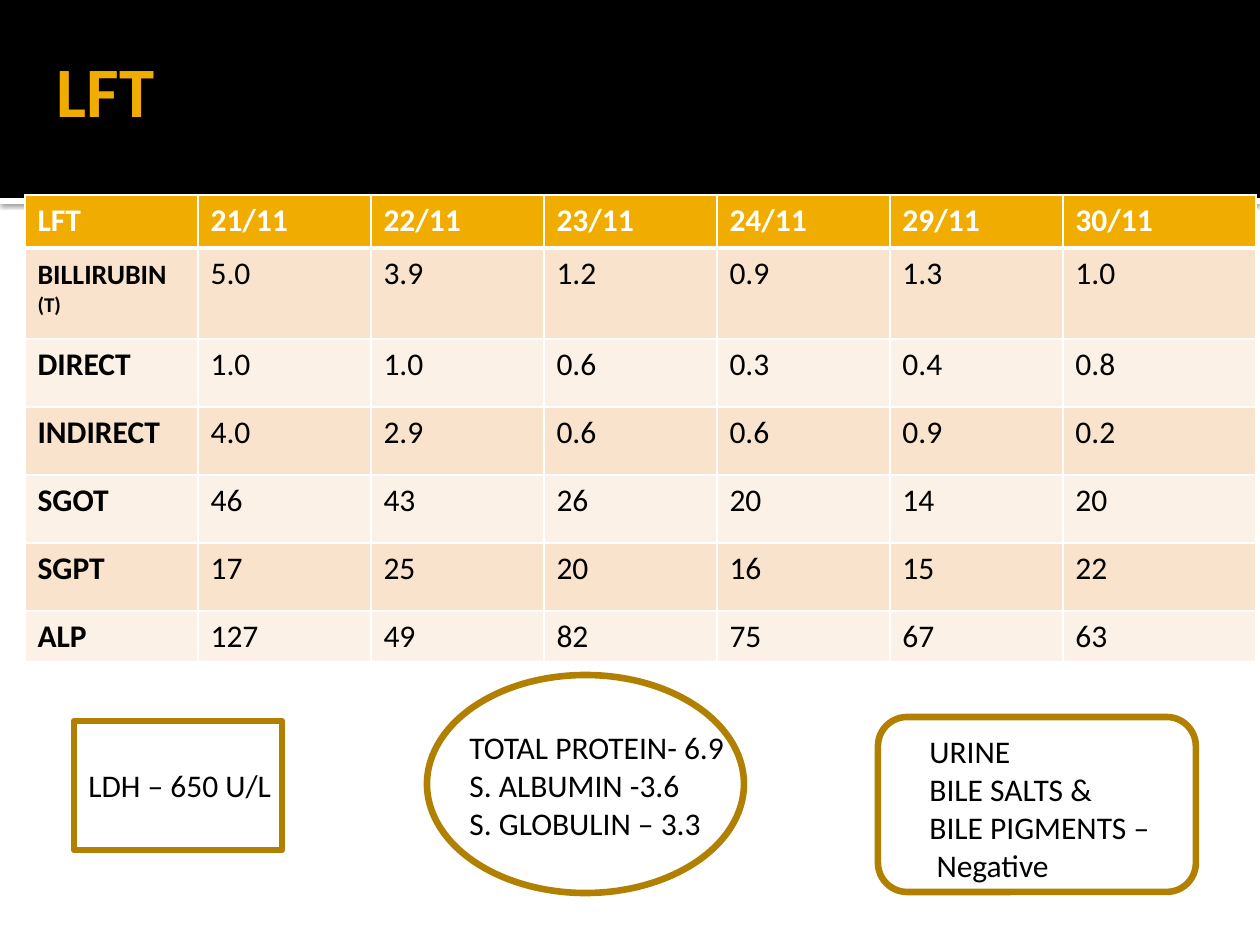
import pptx
import pptx.util
import pptx.dml.color
import pptx.enum.shapes
import pptx.enum.text
import pptx.oxml
import pptx.oxml.ns

PX = 914400 / 126  # EMU in one px
FONT = "Calibri"
COLORS = {
    "black": "000000", "white": "FFFFFF", "gold": "F0AD00",
    "dark_gold": "B28000", "band": "F9E3CC", "pale": "FCF1E7",
}
SHAPE = pptx.enum.shapes.MSO_SHAPE
NS = pptx.oxml.ns.nsdecls("a")

RESULTS = [
    ["LFT", "21/11", "22/11", "23/11", "24/11", "29/11", "30/11"],
    ["BILLIRUBIN (T)", "5.0", "3.9", "1.2", "0.9", "1.3", "1.0"],
    ["DIRECT", "1.0", "1.0", "0.6", "0.3", "0.4", "0.8"],
    ["INDIRECT", "4.0", "2.9", "0.6", "0.6", "0.9", "0.2"],
    ["SGOT", "46", "43", "26", "20", "14", "20"],
    ["SGPT", "17", "25", "20", "16", "15", "22"],
    ["ALP", "127", "49", "82", "75", "67", "63"],
]
COLUMN_WIDTHS = [173] * 6 + [193]
ROW_HEIGHTS = [53, 91] + [68] * 4 + [45]
# Runs with their own sizes
SIZED_RUNS = {"BILLIRUBIN (T)": [("BILLIRUBIN", 16), (" ", 18), ("(T)", 12)]}

# Outline, its box, offset and size of its text, lines
FINDINGS = [
    (SHAPE.RECTANGLE, (74, 721, 208, 129), (2, 39, 210, 50),
     ["LDH – 650 U/L"]),
    (SHAPE.OVAL, (427, 675, 317, 218), (30, 47, 282, 127),
     ["TOTAL PROTEIN- 6.9", "S. ALBUMIN -3.6", "S. GLOBULIN – 3.3"]),
    (SHAPE.ROUNDED_RECTANGLE, (878, 717, 318, 175), (39, 9, 247, 165),
     ["URINE", "BILE SALTS &", "BILE PIGMENTS –", " Negative"]),
]


def emu(px):
    return round(px * PX)


def rgb(name):
    return pptx.dml.color.RGBColor.from_string(COLORS[name])


def add_run(paragraph, text, color="black", size=18, bold=False):
    run = paragraph.add_run()
    run.text = text
    formats = {"name": FONT, "size": pptx.util.Pt(size), "bold": bold}
    for attribute, value in formats.items():
        setattr(run.font, attribute, value)
    run.font.color.rgb = rgb(color)


def add_outline(slide, kind, box, fill=None, line=None):
    outline = slide.shapes.add_shape(kind, *map(emu, box))
    outline.shadow.inherit = False
    if fill:
        outline.fill.solid()
        outline.fill.fore_color.rgb = rgb(fill)
    else:
        outline.fill.background()
    if line:
        outline.line.color.rgb = rgb(line)
        outline.line.width = pptx.util.Pt(3.78)
    else:
        outline.line.fill.background()
    return outline


def add_header(slide, box):
    left, top, width, height = box
    # White strip with a soft shadow under the black band
    strip = add_outline(slide, SHAPE.RECTANGLE,
                        (left, top + height, width, 6), "white")
    effects = strip._element.spPr.find(pptx.oxml.ns.qn("a:effectLst"))
    effects.append(pptx.oxml.parse_xml(
        f'<a:outerShdw {NS} blurRad="31750" dist="10160" dir="5400000">'
        f'<a:srgbClr val="{COLORS["black"]}"><a:alpha val="60000"/></a:srgbClr>'
        '</a:outerShdw>'))
    add_outline(slide, SHAPE.RECTANGLE, box, "black")

    # Title, brought in front of the band
    title = slide.shapes.title
    slide.shapes._spTree.append(title._element)
    place = (left + 44, top + 55, 160, 68)
    for attribute, value in zip(("left", "top", "width", "height"), place):
        setattr(title, attribute, emu(value))
    frame = title.text_frame
    formats = {
        "margin_left": emu(13), "margin_right": emu(6),
        "margin_top": emu(6), "margin_bottom": emu(6),
        "word_wrap": True, "auto_size": pptx.enum.text.MSO_AUTO_SIZE.NONE,
        "vertical_anchor": pptx.enum.text.MSO_ANCHOR.MIDDLE,
    }
    for attribute, value in formats.items():
        setattr(frame, attribute, value)
    frame.paragraphs[0].alignment = pptx.enum.text.PP_ALIGN.LEFT
    add_run(frame.paragraphs[0], "LFT", "gold", 40.5, True)


def set_borders(cell, widths):
    # Borders come before the fill in the cell properties
    properties = cell._tc.get_or_add_tcPr()
    for index, (side, width) in enumerate(widths.items()):
        properties.insert(index, pptx.oxml.parse_xml(
            f'<a:ln{side} {NS} w="{pptx.util.Pt(width)}"><a:solidFill>'
            f'<a:srgbClr val="{COLORS["white"]}"/></a:solidFill></a:ln{side}>'))


def add_results(slide, left, top):
    box = (left, top, sum(COLUMN_WIDTHS), sum(ROW_HEIGHTS))
    table = slide.shapes.add_table(
        len(RESULTS), len(COLUMN_WIDTHS), *map(emu, box)).table
    for column, width in zip(table.columns, COLUMN_WIDTHS):
        column.width = emu(width)
    for row, height in zip(table.rows, ROW_HEIGHTS):
        row.height = emu(height)

    for r, values in enumerate(RESULTS):
        fill = "gold" if r == 0 else "band" if r % 2 else "pale"
        for c, value in enumerate(values):
            cell = table.cell(r, c)
            cell.fill.solid()
            cell.fill.fore_color.rgb = rgb(fill)
            set_borders(cell, {"L": 1, "R": 1, "T": 3 if r == 1 else 1,
                               "B": 3 if r == 0 else 1})
            for text, size in SIZED_RUNS.get(value, [(value, 18)]):
                add_run(cell.text_frame.paragraphs[0], text,
                        "black" if r else "white", size, r == 0 or c == 0)


def add_finding_text(slide, box, text_box, lines):
    dx, dy, width, height = text_box
    place = (box[0] + dx, box[1] + dy, width, height)
    frame = slide.shapes.add_textbox(*map(emu, place)).text_frame
    frame.word_wrap = False
    frame.auto_size = pptx.enum.text.MSO_AUTO_SIZE.SHAPE_TO_FIT_TEXT
    for index, line in enumerate(lines):
        paragraph = frame.add_paragraph() if index else frame.paragraphs[0]
        add_run(paragraph, line)


def main():
    deck = pptx.Presentation()
    deck.slide_width, deck.slide_height = emu(1260), emu(945)
    slide = deck.slides.add_slide(deck.slide_layouts[5])
    add_header(slide, (0, 0, 1260, 198))
    add_results(slide, 25, 195)
    # Outlines lie behind all of their texts
    for kind, box, _, _ in FINDINGS:
        add_outline(slide, kind, box, line="dark_gold")
    for _, box, text_box, lines in FINDINGS:
        add_finding_text(slide, box, text_box, lines)
    deck.save("out.pptx")


if __name__ == "__main__":
    main()
